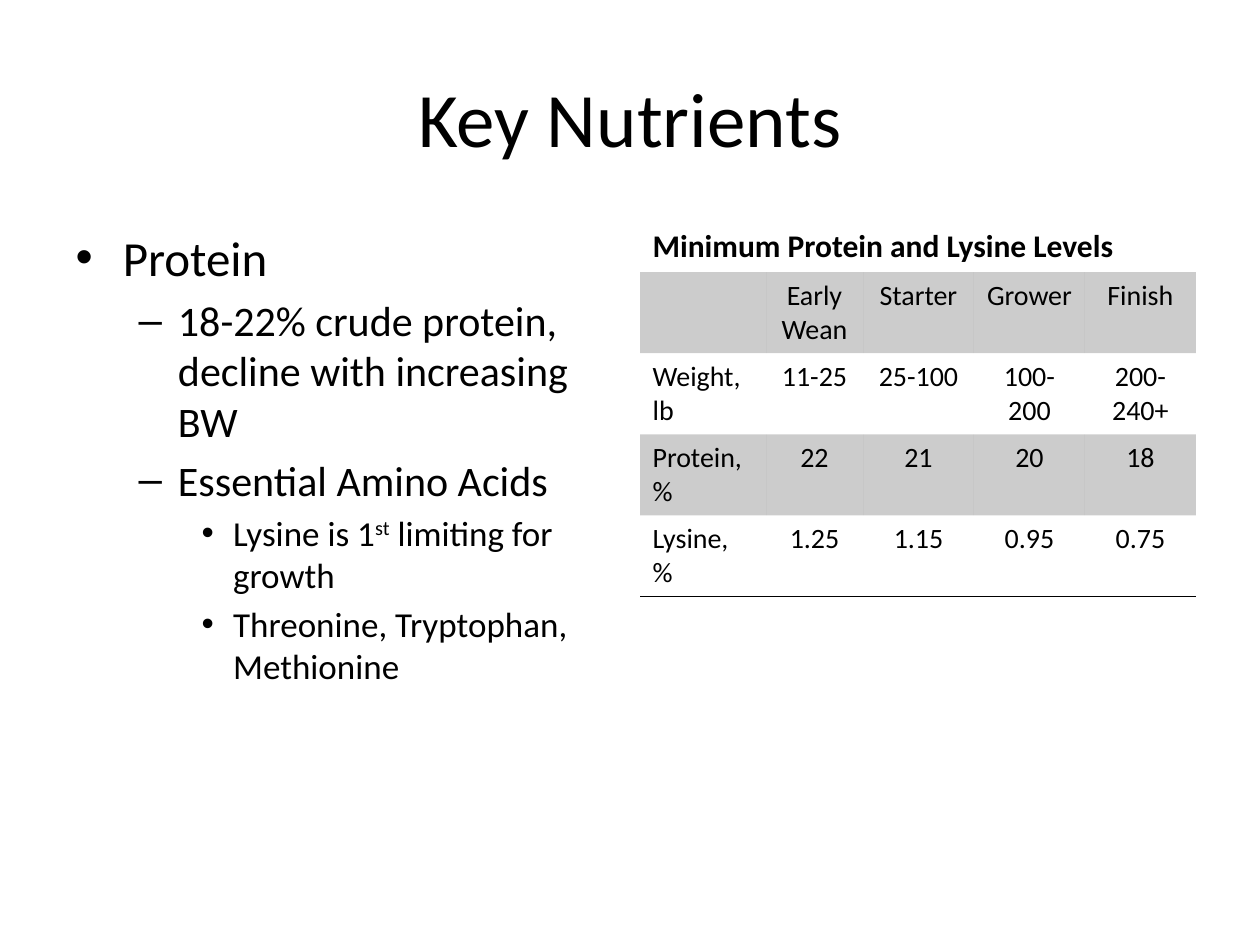
from dataclasses import dataclass

from lxml import etree
from pptx import Presentation
from pptx.dml.color import RGBColor
from pptx.enum.text import MSO_ANCHOR, PP_ALIGN
from pptx.oxml.ns import qn
from pptx.util import Emu, Pt

CENTER = PP_ALIGN.CENTER
LEFT = PP_ALIGN.LEFT
MIDDLE = MSO_ANCHOR.MIDDLE
TOP = MSO_ANCHOR.TOP
EMU_PER_PX = 914400 / 126
TWO_CONTENT_LAYOUT = 3
PLAIN_TABLE_STYLE = "{2D5ABB26-0587-4C30-8999-92F81FD0307C}"


@dataclass(frozen=True)
class Theme:
    font: str = "Calibri"
    ink: str = "000000"
    title_size: int = 44
    body_sizes: tuple = (28, 24, 20)
    caption_size: int = 18
    cell_size: int = 16
    band_alpha: int = 20
    rule_width: int = 1


THEME = Theme()

BULLETS = [
    (0, ["Protein"]),
    (1, ["18-22% crude protein, decline with increasing BW"]),
    (1, ["Essential Amino Acids"]),
    (2, ["Lysine is 1", "st", " limiting for growth"]),
    (2, ["Threonine, Tryptophan, Methionine"]),
]
SUPERSCRIPTS = {"st"}

CAPTION = "Minimum Protein and Lysine Levels"
LEVELS = [
    ["", "Early Wean", "Starter", "Grower", "Finish"],
    ["Weight, lb", "11-25", "25-100", "100-200", "200-240+"],
    ["Protein, %", "22", "21", "20", "18"],
    ["Lysine, %", "1.25", "1.15", "0.95", "0.75"],
]
COLUMN_WIDTHS = [126, 97, 111, 111, 111]
ROW_HEIGHT = 51


def px(length):
    return Emu(round(length * EMU_PER_PX))


def place(shape, left, top, width, height):
    shape.left, shape.top = px(left), px(top)
    shape.width, shape.height = px(width), px(height)


def add_run(paragraph, text, size, bold=False):
    run = paragraph.add_run()
    run.text = text
    run.font.name = THEME.font
    run.font.size = Pt(size)
    run.font.bold = bold
    run.font.color.rgb = RGBColor.from_string(THEME.ink)
    return run


def raise_run(run):
    run._r.get_or_add_rPr().set("baseline", "30000")


def fill_title(title, text):
    place(title, 63, 38, 1134, 157)
    title.text_frame.vertical_anchor = MIDDLE
    paragraph = title.text_frame.paragraphs[0]
    paragraph.alignment = CENTER
    add_run(paragraph, text, THEME.title_size)


def fill_bullets(body, bullets):
    place(body, 63, 221, 557, 624)
    frame = body.text_frame
    frame.vertical_anchor = TOP
    for index, (level, texts) in enumerate(bullets):
        paragraph = frame.add_paragraph() if index else frame.paragraphs[0]
        paragraph.level = level
        for text in texts:
            run = add_run(paragraph, text, THEME.body_sizes[level])
            if text in SUPERSCRIPTS:
                raise_run(run)


def shade(cell):
    cell.fill.solid()
    cell.fill.fore_color.rgb = RGBColor.from_string(THEME.ink)
    color = cell._tc.tcPr.find(qn("a:solidFill")).find(qn("a:srgbClr"))
    etree.SubElement(color, qn("a:alpha"), val=str(THEME.band_alpha * 1000))


def rule_below(cell):
    line = etree.Element(qn("a:lnB"), w=str(Pt(THEME.rule_width)))
    fill = etree.SubElement(line, qn("a:solidFill"))
    etree.SubElement(fill, qn("a:srgbClr"), val=THEME.ink)
    cell._tc.get_or_add_tcPr().insert(0, line)


def fill_cell(cell, text, alignment, size, bold=False):
    cell.fill.background()
    paragraph = cell.text_frame.paragraphs[0]
    paragraph.alignment = alignment
    if text:
        add_run(paragraph, text, size, bold)
    else:
        paragraph.font.size = Pt(size)


def add_levels_table(slide, caption, rows):
    row_count = len(rows) + 1
    frame = slide.shapes.add_table(
        row_count, len(COLUMN_WIDTHS), px(640), px(221),
        px(sum(COLUMN_WIDTHS)), px(ROW_HEIGHT * row_count))
    table = frame.table
    table.first_row = False
    table.horz_banding = False
    table._tbl.tblPr.find(qn("a:tableStyleId")).text = PLAIN_TABLE_STYLE
    for column, width in zip(table.columns, COLUMN_WIDTHS):
        column.width = px(width)
    for row in table.rows:
        row.height = px(ROW_HEIGHT)

    caption_cell = table.cell(0, 0)
    caption_cell.merge(table.cell(0, len(COLUMN_WIDTHS) - 1))
    fill_cell(caption_cell, caption, LEFT, THEME.caption_size, bold=True)
    for row_index, texts in enumerate(rows, start=1):
        for column_index, text in enumerate(texts):
            cell = table.cell(row_index, column_index)
            alignment = CENTER if column_index else LEFT
            fill_cell(cell, text, alignment, THEME.cell_size)
            if row_index % 2:
                shade(cell)
            if row_index == len(rows):
                rule_below(cell)


def main():
    presentation = Presentation()
    presentation.slide_width = px(1260)
    presentation.slide_height = px(945)
    layout = presentation.slide_layouts[TWO_CONTENT_LAYOUT]
    slide = presentation.slides.add_slide(layout)
    title, body, unused = list(slide.placeholders)[:3]
    unused.element.getparent().remove(unused.element)

    fill_title(title, "Key Nutrients")
    fill_bullets(body, BULLETS)
    add_levels_table(slide, CAPTION, LEVELS)
    presentation.save("out.pptx")


if __name__ == "__main__":
    main()
